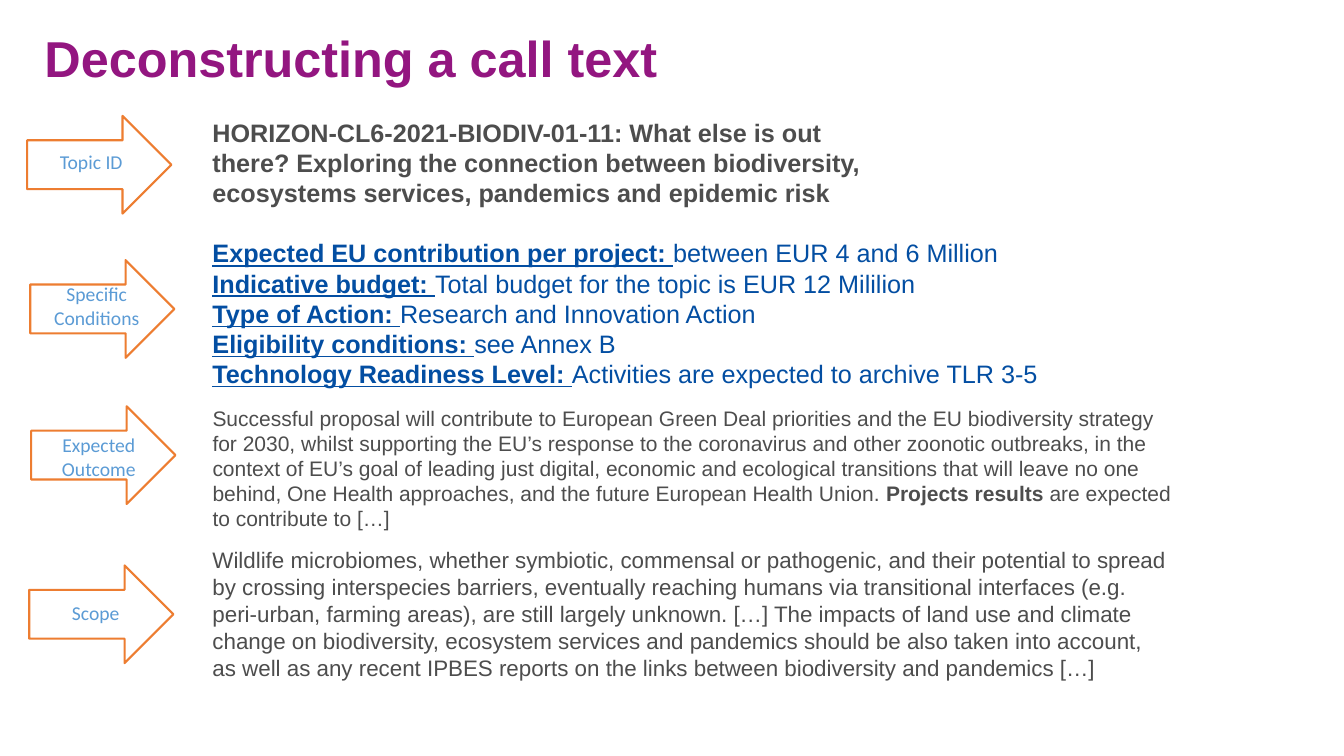
import pptx
import pptx.dml.color
import pptx.enum.shapes
import pptx.enum.text
import pptx.util

ORANGE, SKY, BLUE, GREY, PURPLE = "ED7D31", "5B9BD5", "034EA2", "4D4D4D", "931680"
ARROW_WIDTH, ARROW_HEIGHT = 103, 69.8
TEXT_LEFT = 144.7


def colour(value):
    return pptx.dml.color.RGBColor.from_string(value)


def points(*values):
    return [pptx.util.Pt(value) for value in values]


def add_text(para, text, size=18, name="Arial", fill=GREY, bold=False, underline=False):
    span = para.add_run()
    span.text = text
    span.font.size = pptx.util.Pt(size)
    span.font.name = name
    span.font.color.rgb = colour(fill)
    span.font.bold = bold
    span.font.underline = underline


class CallPage:
    """Draws the parts of a call text slide in one style."""

    def __init__(self, deck):
        self.page = deck.slides.add_slide(deck.slide_layouts[5])

    def title(self, text, left, top, width, height):
        box = self.page.shapes.title
        box.left, box.top, box.width, box.height = points(left, top, width, height)
        frame = box.text_frame
        frame.margin_bottom = 0
        frame.word_wrap = True
        frame.auto_size = pptx.enum.text.MSO_AUTO_SIZE.NONE
        frame.vertical_anchor = pptx.enum.text.MSO_ANCHOR.BOTTOM
        para = frame.paragraphs[0]
        para.alignment = pptx.enum.text.PP_ALIGN.LEFT
        add_text(para, text, size=36, fill=PURPLE, bold=True)

    def text_box(self, shapes, left, top, width, height, paragraphs, align="LEFT"):
        box = shapes.add_textbox(*points(left, top, width, height))
        frame = box.text_frame
        frame.word_wrap = True
        frame.auto_size = pptx.enum.text.MSO_AUTO_SIZE.SHAPE_TO_FIT_TEXT
        for index, spans in enumerate(paragraphs):
            para = frame.add_paragraph() if index else frame.paragraphs[0]
            para.alignment = pptx.enum.text.PP_ALIGN[align]
            for text, style in spans:
                add_text(para, text, **style)

    def arrow(self, left, top, label, label_left, label_top, label_width, label_height):
        shapes = self.page.shapes.add_group_shape().shapes
        shape = shapes.add_shape(
            pptx.enum.shapes.MSO_SHAPE.RIGHT_ARROW,
            *points(left, top, ARROW_WIDTH, ARROW_HEIGHT),
        )
        shape.shadow.inherit = False
        shape.fill.background()
        shape.line.color.rgb = colour(ORANGE)
        shape.line.width = pptx.util.Pt(1.5)
        style = dict(size=14, name="Calibri", fill=SKY)
        self.text_box(shapes, label_left, label_top, label_width, label_height,
                      [[(label, style)]], align="CENTER")

    def passage(self, top, width, height, paragraphs):
        self.text_box(self.page.shapes, TEXT_LEFT, top, width, height, paragraphs)


ARROWS = [
    (19.4, 82.8, "Topic ID", 13.7, 103.7, 103, 24.5),
    (21.6, 185.8, "Specific Conditions", 23, 198, 92.2, 41),
    (22.3, 290.2, "Expected Outcome", 24.5, 306, 92.2, 41),
    (20.9, 403.9, "Scope", 22.3, 425.5, 92.2, 24.5),
]
TOPIC = (
    "HORIZON-CL6-2021-BIODIV-01-11: What else is out there? Exploring the connection "
    "between biodiversity, ecosystems services, pandemics and epidemic risk"
)
CONDITIONS = [
    ("Expected EU contribution per project: ", "between EUR 4 and 6 Million"),
    ("Indicative budget: ", "Total budget for the topic is EUR 12 Mililion"),
    ("Type of Action: ", "Research and Innovation Action"),
    ("Eligibility conditions: ", "see Annex B"),
    ("Technology Readiness Level: ", "Activities are expected to archive TLR 3-5"),
]
OUTCOME = (
    "Successful proposal will contribute to European Green Deal priorities and the EU "
    "biodiversity strategy for 2030, whilst supporting the EU’s response to the "
    "coronavirus and other zoonotic outbreaks, in the context of EU’s goal of leading "
    "just digital, economic and ecological transitions that will leave no one behind, "
    "One Health approaches, and the future European Health Union. "
)
SCOPE = (
    "Wildlife microbiomes, whether symbiotic, commensal or pathogenic, and their "
    "potential to spread by crossing interspecies barriers, eventually reaching humans "
    "via transitional interfaces (e.g. peri-urban, farming areas), are still largely "
    "unknown. […] The impacts of land use and climate change on biodiversity, ecosystem "
    "services and pandemics should be also taken into account, as well as any recent "
    "IPBES reports on the links between biodiversity and pandemics […]"
)


def main():
    deck = pptx.Presentation()
    deck.slide_width, deck.slide_height = points(960, 540)
    call = CallPage(deck)
    call.title("Deconstructing a call text", 24.5, 15.1, 828, 47.5)
    for arrow in ARROWS:
        call.arrow(*arrow)

    call.passage(79.9, 480.2, 72.7, [[(TOPIC, dict(bold=True))]])
    heading = dict(fill=BLUE, bold=True, underline=True)
    call.passage(166.3, 645.1, 116.6, [
        [(name, heading), (value, dict(fill=BLUE))] for name, value in CONDITIONS
    ])
    call.passage(285.8, 706.3, 97.9, [[
        (OUTCOME, dict(size=15)),
        ("Projects results", dict(size=15, bold=True)),
        (" are expected to contribute to […]", dict(size=15)),
    ]])
    call.passage(386.6, 698.4, 104.4, [[(SCOPE, dict(size=16))]])
    deck.save("out.pptx")


if __name__ == "__main__":
    main()
